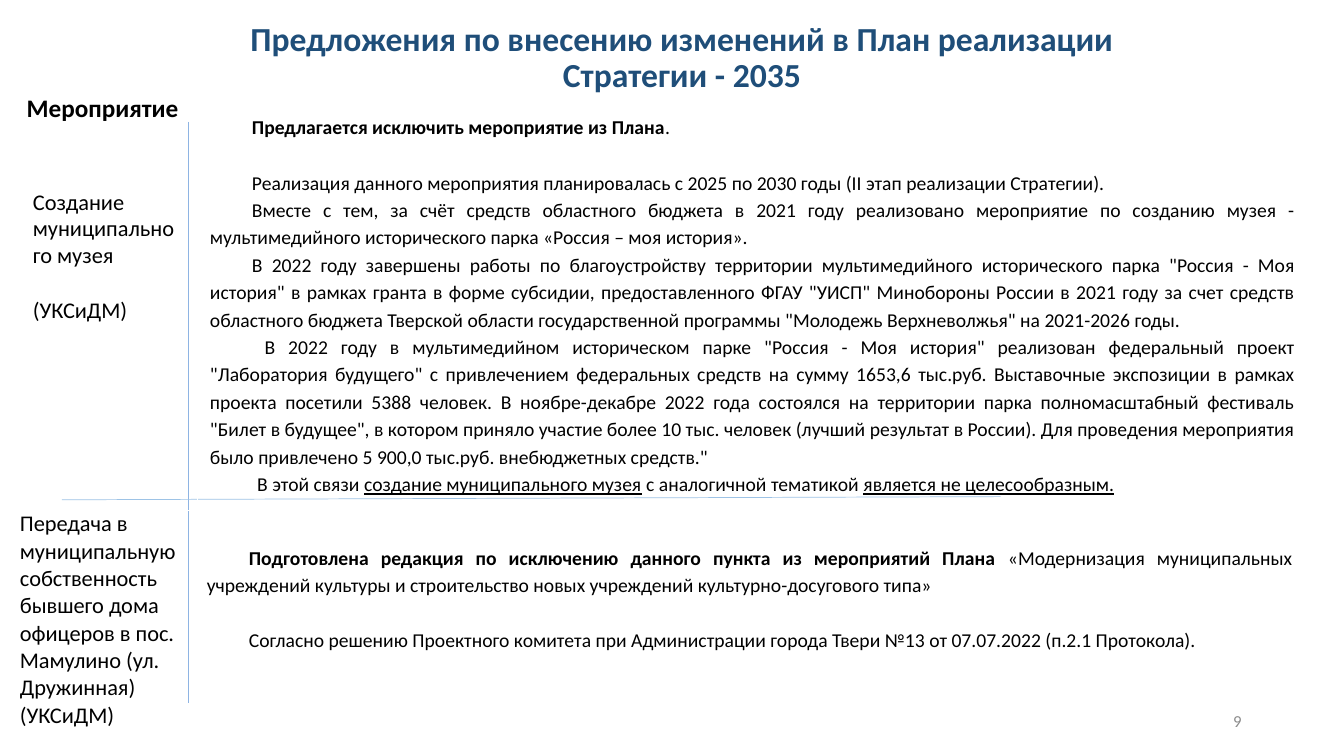
from dataclasses import dataclass

from lxml.etree import SubElement
from pptx import Presentation
from pptx.dml.color import RGBColor
from pptx.enum.shapes import MSO_CONNECTOR as Connector
from pptx.enum.text import MSO_ANCHOR as Anchor, MSO_AUTO_SIZE as AutoSize, PP_ALIGN as Align
from pptx.oxml.ns import qn
from pptx.util import Emu, Pt

PX = 9525
COLOURS = {
    "title": "1F4E79",
    "text": "000000",
    "number": "8C8C8C",
    "divider": "8EB4E3",
    "separator": "9DC3E6",
}
BOLD = {"bold": True}
UNDERLINE = {"underline": True}
Box = tuple[int, int, int, int]


@dataclass(frozen=True)
class Span:
    text: str
    format: dict | None = None


@dataclass(frozen=True)
class Para:
    spans: tuple[Span, ...]
    indent: int = 0
    before: int = 0


@dataclass(frozen=True)
class Style:
    size: int
    colour: str = "text"
    align: Align = Align.LEFT
    spacing: float = 1.0
    bold: bool = False


@dataclass(frozen=True)
class Rule:
    ends: Box
    colour: str
    width: float


@dataclass(frozen=True)
class Label:
    box: Box
    paras: tuple[Para, ...]
    style: Style
    wrap: bool = True
    anchor: Anchor = Anchor.TOP


@dataclass(frozen=True)
class Panel:
    box: Box
    paras: tuple[Para, ...]
    style: Style


def plain(text: str, indent: int = 0, before: int = 0) -> Para:
    return Para((Span(text),), indent, before)


def emu(box: Box) -> list[Emu]:
    return [Emu(length * PX) for length in box]


def rgb(name: str) -> RGBColor:
    return RGBColor.from_string(COLOURS[name])


TITLE = Style(24, "title", Align.CENTER, 0.9, True)
ACTIVITY = Style(16)
PROPOSAL = Style(14, align=Align.JUSTIFY, spacing=1.15)
INDENT = 40

TITLE_BOX = (40, 27, 1219, 57)
TITLE_LINES = (
    plain("Предложения по внесению изменений в План реализации"),
    plain("Стратегии - 2035"),
)

RULES = (
    Rule((180, 116, 180, 670), "divider", 0.75),
    Rule((953, 473, 59, 476), "separator", 0.5),
)

LABELS = (
    Label((904, 667, 288, 38), (plain("9"),), Style(12, "number", Align.RIGHT),
          anchor=Anchor.MIDDLE),
    Label((22, 174, 157, 139),
          (plain("Создание муниципального музея"), plain("(УКСиДМ)", before=20)), ACTIVITY),
    Label((16, 83, 170, 38), (plain("Мероприятие"),), Style(18, bold=True), wrap=False),
)

MUSEUM_PROPOSAL = (
    Para((Span("Предлагается исключить мероприятие из Плана", BOLD), Span(".")), INDENT),
    plain("Реализация данного мероприятия планировалась с 2025 по 2030 годы "
          "(II этап реализации Стратегии).", INDENT, before=20),
    plain("Вместе с тем, за счёт средств областного бюджета в 2021 году реализовано "
          "мероприятие по созданию музея - мультимедийного исторического парка "
          "«Россия – моя история».", INDENT),
    plain("В 2022 году завершены работы по благоустройству территории мультимедийного "
          'исторического парка "Россия - Моя история" в рамках гранта в форме субсидии, '
          'предоставленного ФГАУ "УИСП" Минобороны России в 2021 году за счет средств '
          "областного бюджета Тверской области государственной программы "
          '"Молодежь Верхневолжья" на 2021-2026 годы.', INDENT),
    plain('В 2022 году в мультимедийном историческом парке "Россия - Моя история" '
          'реализован федеральный проект "Лаборатория будущего" с привлечением федеральных '
          "средств на сумму 1653,6 тыс.руб. Выставочные экспозиции в рамках проекта посетили "
          "5388 человек. В ноябре-декабре 2022 года состоялся на территории парка "
          'полномасштабный фестиваль "Билет в будущее", в котором приняло участие более '
          "10 тыс. человек (лучший результат в России). Для проведения мероприятия было "
          'привлечено 5 900,0 тыс.руб. внебюджетных средств."', INDENT + 12),
    Para((Span("В этой связи "),
          Span("создание муниципального музея", UNDERLINE),
          Span(" с аналогичной тематикой "),
          Span("является не целесообразным.", UNDERLINE)), INDENT + 5),
)

OFFICERS_HOUSE = (
    plain("Передача в муниципальную собственность бывшего дома офицеров "
          "в пос. Мамулино (ул. Дружинная)"),
    plain("(УКСиДМ)"),
)

OFFICERS_HOUSE_PROPOSAL = (
    Para((Span("Подготовлена редакция по исключению данного пункта из мероприятий Плана ", BOLD),
          Span("«Модернизация муниципальных учреждений культуры и строительство новых "
               "учреждений культурно-досугового типа»")), INDENT),
    plain("Согласно решению Проектного комитета при Администрации города Твери №13 "
          "от 07.07.2022 (п.2.1 Протокола).", INDENT, before=20),
)

PANELS = (
    Panel((188, 107, 1058, 381), MUSEUM_PROPOSAL, PROPOSAL),
    Panel((7, 486, 179, 234), OFFICERS_HOUSE, ACTIVITY),
    Panel((185, 517, 1058, 150), OFFICERS_HOUSE_PROPOSAL, PROPOSAL),
)


def write(frame, paras: tuple[Para, ...], style: Style) -> None:
    for index, para in enumerate(paras):
        paragraph = frame.add_paragraph() if index else frame.paragraphs[0]
        layout = {"alignment": style.align, "line_spacing": style.spacing,
                  "space_before": Pt(para.before), "space_after": Pt(0)}
        for name, value in layout.items():
            setattr(paragraph, name, value)
        if para.indent:
            paragraph._p.get_or_add_pPr().set("indent", str(para.indent * PX))
        for span in para.spans:
            run = paragraph.add_run()
            run.text = span.text
            look = {"name": "Calibri", "size": Pt(style.size), "bold": style.bold}
            for name, value in (look | (span.format or {})).items():
                setattr(run.font, name, value)
            run.font.color.rgb = rgb(style.colour)


def set_title(slide) -> None:
    title = slide.shapes.title
    for side, length in zip(("left", "top", "width", "height"), emu(TITLE_BOX)):
        setattr(title, side, length)
    title.text_frame.auto_size = AutoSize.NONE
    title.text_frame.vertical_anchor = Anchor.MIDDLE
    write(title.text_frame, TITLE_LINES, TITLE)


def draw_rule(slide, rule: Rule) -> None:
    line = slide.shapes.add_connector(Connector.STRAIGHT, *emu(rule.ends))
    line.line.color.rgb = rgb(rule.colour)
    line.line.width = Pt(rule.width)
    SubElement(line._element.spPr, qn("a:effectLst"))


def draw_label(slide, label: Label) -> None:
    frame = slide.shapes.add_textbox(*emu(label.box)).text_frame
    frame.word_wrap = label.wrap
    frame.vertical_anchor = label.anchor
    write(frame, label.paras, label.style)


def draw_panel(slide, panel: Panel) -> None:
    """Draw a one-cell table without visible fill or banding."""
    table = slide.shapes.add_table(1, 1, *emu(panel.box)).table
    table.first_row = table.horz_banding = False
    cell = table.cell(0, 0)
    cell.fill.background()
    margins = {"margin_left": 12, "margin_right": 12, "margin_top": 0, "margin_bottom": 0}
    for side, length in margins.items():
        setattr(cell, side, Emu(length * PX))
    write(cell.text_frame, panel.paras, panel.style)


def main() -> None:
    deck = Presentation()
    deck.slide_width, deck.slide_height = emu((1280, 720))
    slide = deck.slides.add_slide(deck.slide_layouts[5])
    set_title(slide)
    for rule in RULES:
        draw_rule(slide, rule)
    for panel in PANELS:
        draw_panel(slide, panel)
    for label in LABELS:
        draw_label(slide, label)
    deck.save("out.pptx")


if __name__ == "__main__":
    main()
